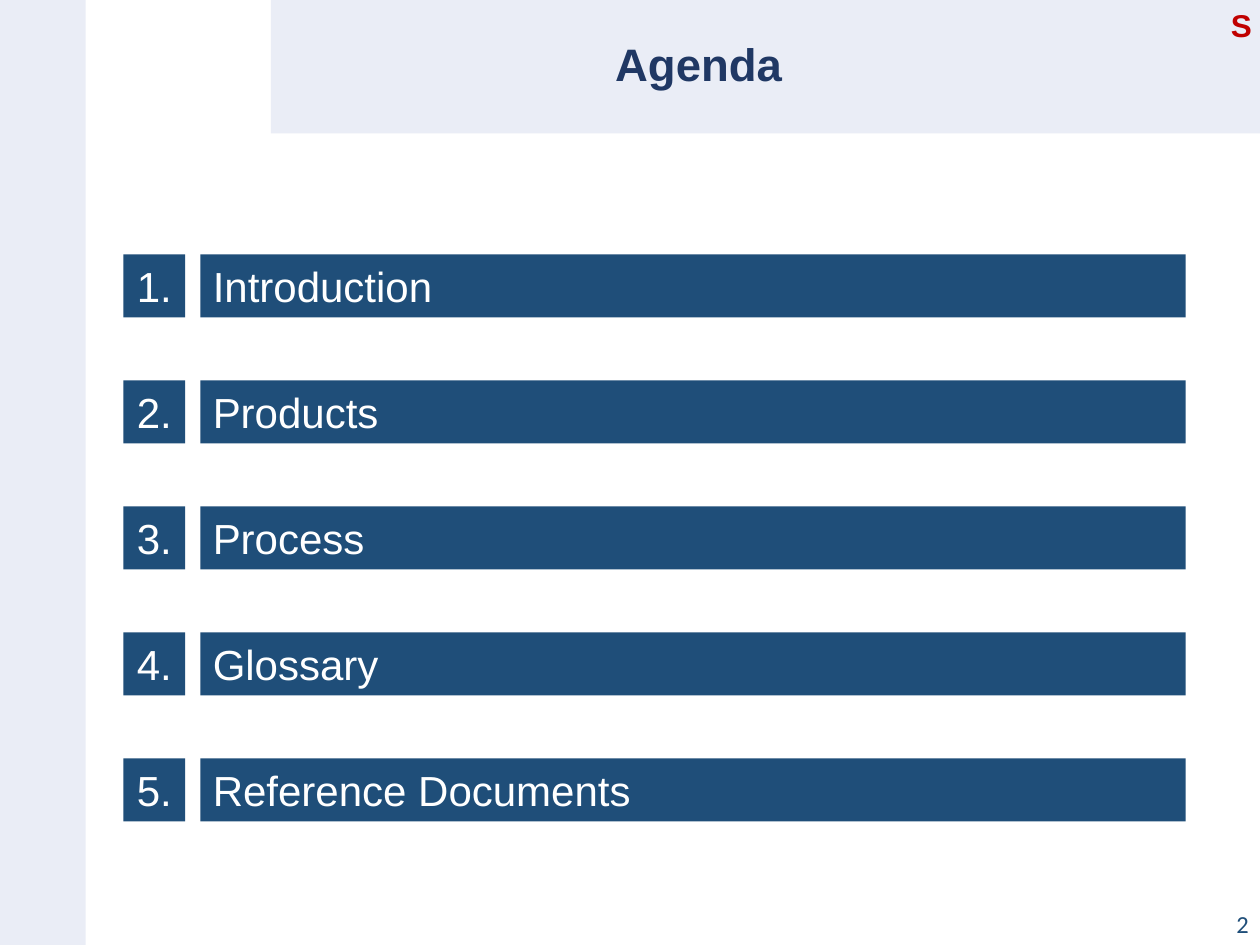
from dataclasses import dataclass

from pptx import Presentation
from pptx.dml.color import RGBColor
from pptx.enum.shapes import MSO_SHAPE
from pptx.enum.text import MSO_ANCHOR, PP_ALIGN
from pptx.util import Inches, Pt

PALE = RGBColor(0xEA, 0xED, 0xF6)
NAVY = RGBColor(0x20, 0x38, 0x64)
BLUE = RGBColor(0x1F, 0x4E, 0x79)
WHITE = RGBColor(0xFF, 0xFF, 0xFF)
RED = RGBColor(0xC0, 0x00, 0x00)

TOPICS = ["Introduction", "Products", "Process", "Glossary", "Reference Documents"]
FIRST_TOP = 2.02
ROW_PITCH = 1.0
ROW_HEIGHT = 0.5


@dataclass(frozen=True)
class Area:
    left: float
    top: float
    width: float
    height: float

    def lengths(self) -> list[int]:
        return [Inches(n) for n in (self.left, self.top, self.width, self.height)]


@dataclass(frozen=True)
class Style:
    size: int
    color: RGBColor
    bold: bool = False
    align: PP_ALIGN = PP_ALIGN.LEFT
    anchor: MSO_ANCHOR = MSO_ANCHOR.MIDDLE
    font: str = "Arial"
    spacing: float = 1.0


TITLE = Style(26, NAVY, bold=True, align=PP_ALIGN.CENTER, spacing=0.9)
PAGE_NUMBER = Style(14, BLUE, align=PP_ALIGN.RIGHT, anchor=MSO_ANCHOR.BOTTOM, font="Calibri")
MARK = Style(18, RED, bold=True, anchor=MSO_ANCHOR.TOP)
TOPIC = Style(24, WHITE)
NUMBER = Style(24, WHITE, align=PP_ALIGN.CENTER)


def write(shape, text: str, style: Style) -> None:
    frame = shape.text_frame
    frame.word_wrap = True
    frame.vertical_anchor = style.anchor
    para = frame.paragraphs[0]
    para.text = text
    para.alignment = style.align
    para.line_spacing = style.spacing
    para.font.name = style.font
    para.font.size = Pt(style.size)
    para.font.bold = style.bold
    para.font.color.rgb = style.color


def add_bar(page, area: Area, fill: RGBColor):
    bar = page.shapes.add_shape(MSO_SHAPE.RECTANGLE, *area.lengths())
    bar.shadow.inherit = False
    bar.fill.solid()
    bar.fill.fore_color.rgb = fill
    bar.line.fill.background()
    return bar


def add_label(page, area: Area, text: str, style: Style) -> None:
    write(page.shapes.add_textbox(*area.lengths()), text, style)


def add_topic(page, index: int, topic: str) -> None:
    top = FIRST_TOP + index * ROW_PITCH
    write(add_bar(page, Area(1.59, top, 7.82, ROW_HEIGHT), BLUE), topic, TOPIC)
    write(add_bar(page, Area(0.98, top, 0.49, ROW_HEIGHT), BLUE), f"{index + 1}.", NUMBER)


def main() -> None:
    deck = Presentation()
    deck.slide_width = Inches(10)
    deck.slide_height = Inches(7.5)
    page = deck.slides.add_slide(deck.slide_layouts[6])

    add_bar(page, Area(0, 0, 0.68, 7.5), PALE)
    add_bar(page, Area(2.15, 0, 7.85, 1.06), PALE)
    add_label(page, Area(1.59, 0, 7.91, 1.06), "Agenda", TITLE)
    add_label(page, Area(7.76, 7.1, 2.25, 0.4), "2", PAGE_NUMBER)
    for index, topic in enumerate(TOPICS):
        add_topic(page, index, topic)
    add_label(page, Area(9.67, 0, 0.21, 0.4), "S", MARK)

    deck.save("out.pptx")


if __name__ == "__main__":
    main()
